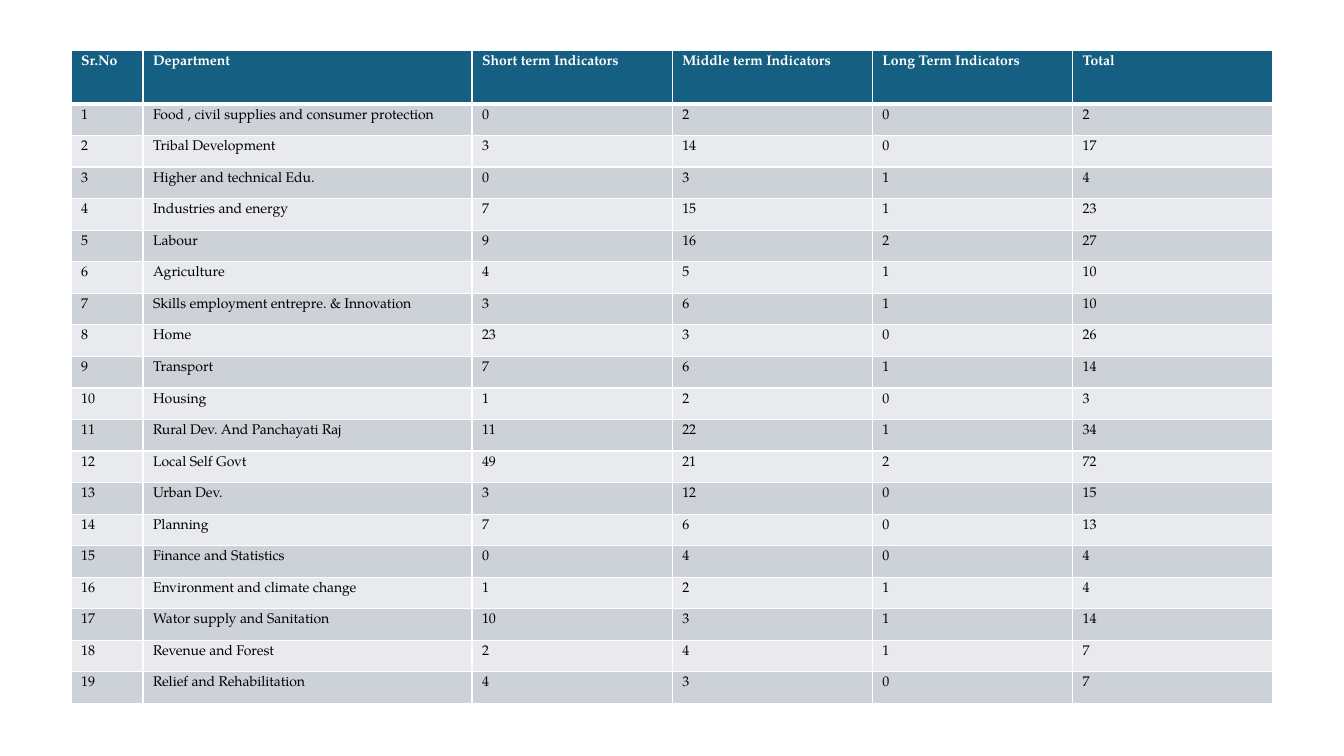
from lxml import etree
from pptx import Presentation
from pptx.dml.color import RGBColor
from pptx.oxml.ns import qn
from pptx.util import Emu, Pt

# Content
HEADERS = ["Sr.No", "Department", "Short term Indicators",
           "Middle term Indicators", "Long Term Indicators", "Total"]
# Department, short, middle and long term indicators
DEPARTMENTS = [
    ("Food , civil supplies and consumer protection", 0, 2, 0),
    ("Tribal Development", 3, 14, 0),
    ("Higher and technical Edu.", 0, 3, 1),
    ("Industries and energy", 7, 15, 1),
    ("Labour", 9, 16, 2),
    ("Agriculture", 4, 5, 1),
    ("Skills employment entrepre. & Innovation", 3, 6, 1),
    ("Home", 23, 3, 0),
    ("Transport", 7, 6, 1),
    ("Housing", 1, 2, 0),
    ("Rural Dev. And Panchayati Raj", 11, 22, 1),
    ("Local Self Govt", 49, 21, 2),
    ("Urban Dev.", 3, 12, 0),
    ("Planning", 7, 6, 0),
    ("Finance and Statistics", 0, 4, 0),
    ("Environment and climate change", 1, 2, 1),
    ("Wator supply and Sanitation", 10, 3, 1),
    ("Revenue and Forest", 2, 4, 1),
    ("Relief and Rehabilitation", 4, 3, 0),
]

THEME = {
    "font": "TeX Gyre Pagella", "size": 10,
    "header": "156082", "bands": ("CCD2D8", "E8EAED"),
    "header_text": "FFFFFF", "text": "000000", "border": "FFFFFF",
    "thin": 1, "thick": 3,
}

# Lengths in px
SCALE = 914400 / 100.8
SLIDE_W, SLIDE_H = 1344, 756
LEFT, TOP, WIDTH, HEIGHT = 71, 50, 1202, 654
NUMBER_W, DEPARTMENT_W, HEADER_H = 72, 329, 54


def px(n):
    return Emu(round(n * SCALE))


def write(cell, text, color, bold=False):
    r = cell.text_frame.paragraphs[0].add_run()
    r.text = text
    r.font.name = THEME["font"]
    r.font.size = Pt(THEME["size"])
    r.font.bold = bold
    r.font.color.rgb = RGBColor.from_string(color)


def set_borders(cell, top, bottom):
    tcPr = cell._tc.get_or_add_tcPr()
    widths = {"L": THEME["thin"], "R": THEME["thin"], "T": top, "B": bottom}
    for side, width in widths.items():
        ln = etree.SubElement(tcPr, qn(f"a:ln{side}"), w=str(Pt(width)))
        fill = etree.SubElement(ln, qn("a:solidFill"))
        etree.SubElement(fill, qn("a:srgbClr"), val=THEME["border"])


prs = Presentation()
prs.slide_width, prs.slide_height = px(SLIDE_W), px(SLIDE_H)
s = prs.slides.add_slide(prs.slide_layouts[6])

# Number the departments and add up their indicators
rows = [HEADERS] + [(i, name, *counts, sum(counts))
                    for i, (name, *counts) in enumerate(DEPARTMENTS, 1)]

# Table grid
table = s.shapes.add_table(len(rows), len(HEADERS), px(LEFT), px(TOP),
                           px(WIDTH), px(HEIGHT)).table
count_w = (WIDTH - NUMBER_W - DEPARTMENT_W) / (len(HEADERS) - 2)
for c, col in enumerate(table.columns):
    col.width = px((NUMBER_W, DEPARTMENT_W)[c] if c < 2 else count_w)
body_h = (HEIGHT - HEADER_H) / len(DEPARTMENTS)
for i, row in enumerate(table.rows):
    row.height = px(body_h if i else HEADER_H)

# Cells: a header row, then alternating bands
for i, values in enumerate(rows):
    is_header = i == 0
    fill = THEME["header"] if is_header else THEME["bands"][(i - 1) % 2]
    color = THEME["header_text"] if is_header else THEME["text"]
    top = THEME["thick"] if i == 1 else THEME["thin"]
    bottom = THEME["thick"] if is_header else THEME["thin"]
    for c, value in enumerate(values):
        cell = table.cell(i, c)
        set_borders(cell, top, bottom)
        cell.fill.solid()
        cell.fill.fore_color.rgb = RGBColor.from_string(fill)
        write(cell, str(value), color, bold=is_header)

prs.save("out.pptx")
